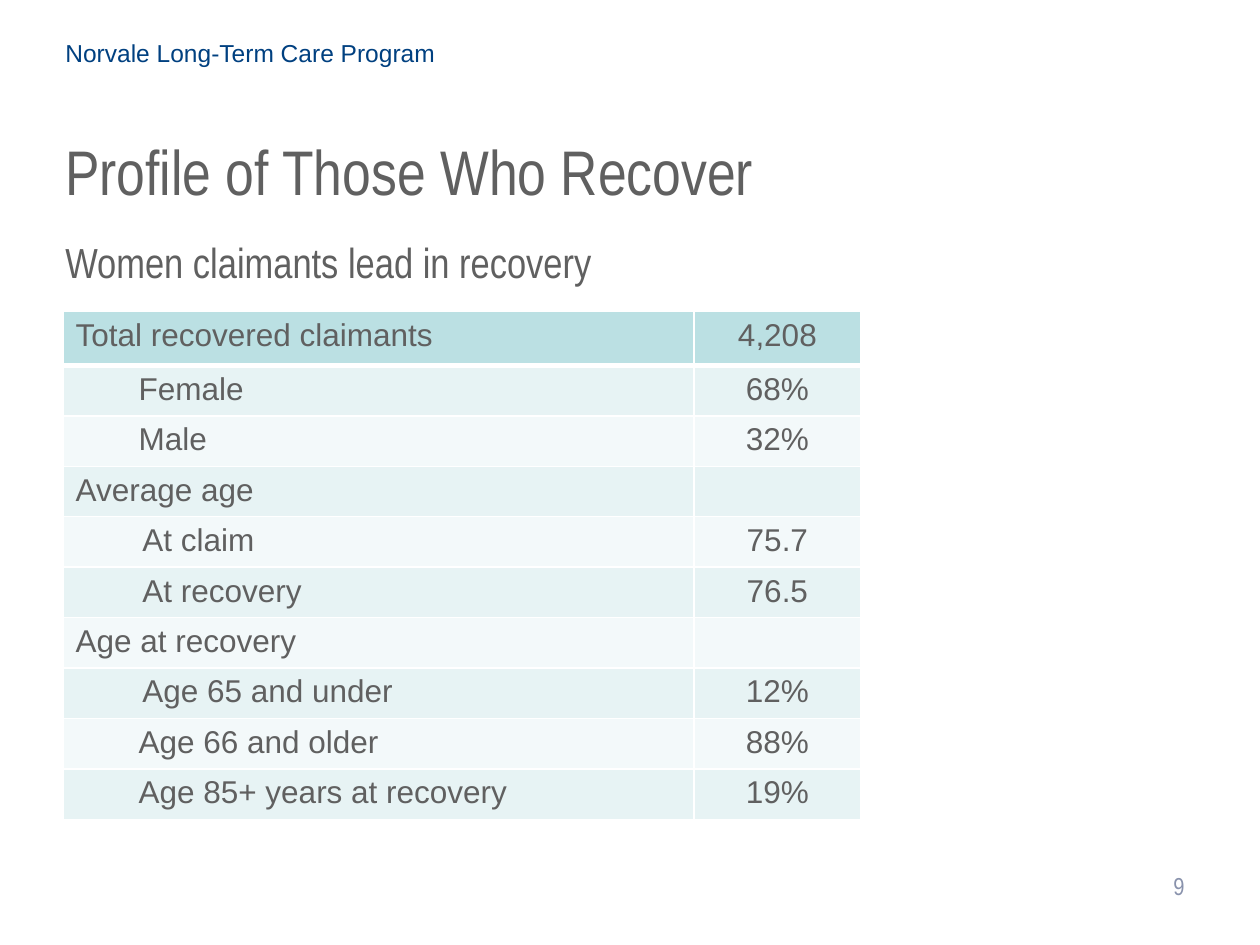
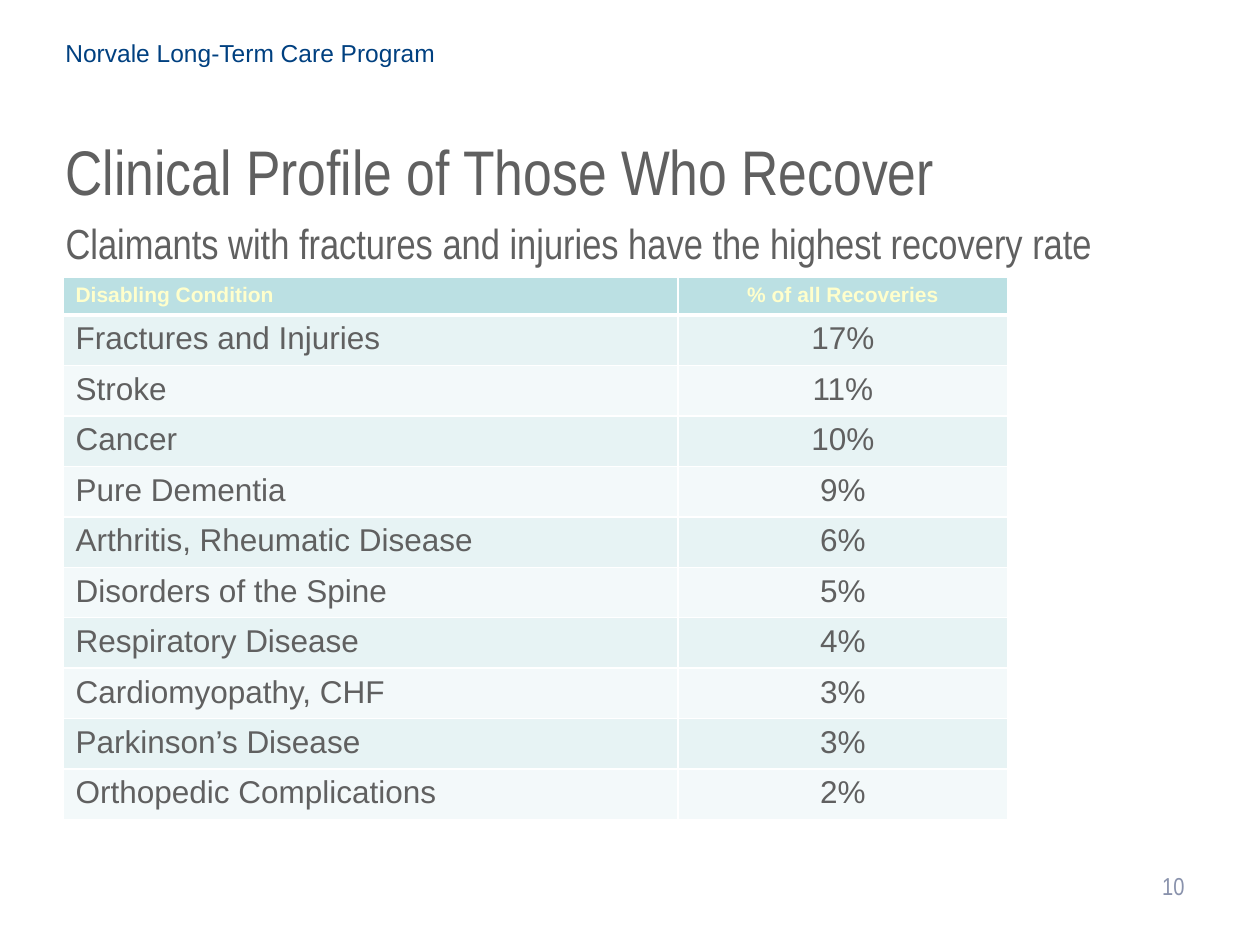
from dataclasses import dataclass

from lxml import etree
from pptx import Presentation
from pptx import util as u
from pptx.dml.color import RGBColor
from pptx.enum import text as t
from pptx.oxml import ns

PX = 9144
GREY = RGBColor(0x60, 0x60, 0x60)
NAVY = RGBColor(0x00, 0x40, 0x80)
SLATE = RGBColor(0x89, 0x92, 0xAC)
CREAM = RGBColor(0xFF, 0xFF, 0xCC)
WHITE = RGBColor(0xFF, 0xFF, 0xFF)
HEADER_FILL = RGBColor(0xBB, 0xE0, 0xE3)
BAND_FILLS = (RGBColor(0xF3, 0xF9, 0xFA), RGBColor(0xE7, 0xF3, 0xF4))
BODY_FONT = "Arial"
TITLE_FONT = "Arial Narrow"
PROGRAM = "Norvale Long-Term Care Program"


@dataclass(frozen=True)
class Area:
    left: int
    top: int
    width: int
    height: int
    margin_x: int = 10
    margin_y: int = 5


@dataclass(frozen=True)
class Row:
    label: str
    value: str = ""
    indent: int = 0
    height: int = 38


@dataclass(frozen=True)
class Page:
    number: int
    title: str
    subtitle: str
    subtitle_area: Area
    table_top: int
    columns: tuple[int, int]
    rows: list[Row]
    header_size: int = 18
    header_color: RGBColor = GREY
    header_bold: bool = False


PROGRAM_AREA = Area(42, 25, 908, 40)
TITLE_AREA = Area(42, 100, 908, 67)
NUMBER_AREA = Area(717, 683, 233, 40)
TABLE_LEFT = 50

CONDITIONS = [
    ("Fractures and Injuries", "17%"),
    ("Stroke", "11%"),
    ("Cancer", "10%"),
    ("Pure Dementia", "9%"),
    ("Arthritis, Rheumatic Disease", "6%"),
    ("Disorders of the Spine", "5%"),
    ("Respiratory Disease", "4%"),
    ("Cardiomyopathy, CHF", "3%"),
    ("Parkinson’s Disease", "3%"),
    ("Orthopedic Complications", "2%"),
]

PAGES = [
    Page(
        number=9,
        title="Profile of Those Who Recover",
        subtitle="Women claimants lead in recovery",
        subtitle_area=Area(42, 183, 925, 58),
        table_top=247,
        columns=(501, 132),
        rows=[
            Row("Total recovered claimants", "4,208", height=43),
            Row("Female", "68%", 50),
            Row("Male", "32%", 50),
            Row("Average age"),
            Row("At claim", "75.7", 53),
            Row("At recovery", "76.5", 53),
            Row("Age at recovery"),
            Row("Age 65 and under", "12%", 53, height=40),
            Row("Age 66 and older", "88%", 50),
            Row("Age 85+ years at recovery", "19%", 50),
        ],
    ),
    Page(
        number=10,
        title="Clinical Profile of Those Who Recover",
        subtitle="Claimants with fractures and injuries have the highest recovery rate",
        subtitle_area=Area(50, 171, 872, 44, 2, 2),
        table_top=220,
        columns=(488, 262),
        rows=[Row("Disabling Condition", "% of all Recoveries", height=30)]
        + [Row(label, value, height=40) for label, value in CONDITIONS],
        header_size=12,
        header_color=CREAM,
        header_bold=True,
    ),
]


def write(frame, text: str, *, size: int, color: RGBColor = GREY,
          font: str = BODY_FONT, bold: bool = False, indent: int = 0,
          align=t.PP_ALIGN.LEFT) -> None:
    para = frame.paragraphs[0]
    para.alignment = align
    if indent:
        para._p.get_or_add_pPr().set("marL", str(indent * PX))
    if not text:
        para.font.size = u.Pt(size)
        return
    span = para.add_run()
    span.text = text
    span.font.size = u.Pt(size)
    span.font.name = font
    span.font.bold = bold
    span.font.color.rgb = color


def add_text(slide, area: Area, text: str, *,
             anchor=t.MSO_ANCHOR.TOP, **text_format) -> None:
    box = slide.shapes.add_textbox(
        area.left * PX, area.top * PX, area.width * PX, area.height * PX)
    frame = box.text_frame
    frame.word_wrap = True
    frame.vertical_anchor = anchor
    frame.margin_left = frame.margin_right = area.margin_x * PX
    frame.margin_top = frame.margin_bottom = area.margin_y * PX
    write(frame, text, **text_format)


def set_borders(cell, row_index: int) -> None:
    properties = cell._tc.get_or_add_tcPr()
    widths = {
        "lnL": 1,
        "lnR": 1,
        "lnT": 3 if row_index == 1 else 1,
        "lnB": 3 if row_index == 0 else 1,
    }
    for position, (side, width) in enumerate(widths.items()):
        line = etree.Element(ns.qn(f"a:{side}"), w=str(u.Pt(width)))
        fill = etree.SubElement(line, ns.qn("a:solidFill"))
        etree.SubElement(fill, ns.qn("a:srgbClr"), val=str(WHITE))
        properties.insert(position, line)


def add_recovery_table(slide, page: Page) -> None:
    table = slide.shapes.add_table(
        len(page.rows), len(page.columns), TABLE_LEFT * PX, page.table_top * PX,
        sum(page.columns) * PX, sum(row.height for row in page.rows) * PX).table
    table.first_row = table.horz_banding = False
    for column, width in zip(table.columns, page.columns):
        column.width = width * PX
    for index, row in enumerate(page.rows):
        table.rows[index].height = row.height * PX
        text_format = {"size": 18}
        if index == 0:
            text_format = {"size": page.header_size, "color": page.header_color,
                           "bold": page.header_bold}
        label_cell, value_cell = table.rows[index].cells
        write(label_cell.text_frame, row.label, indent=row.indent, **text_format)
        write(value_cell.text_frame, row.value, align=t.PP_ALIGN.CENTER, **text_format)
        for cell in (label_cell, value_cell):
            cell.fill.solid()
            cell.fill.fore_color.rgb = BAND_FILLS[index % 2] if index else HEADER_FILL
            set_borders(cell, index)


def add_page(deck, page: Page) -> None:
    slide = deck.slides.add_slide(deck.slide_layouts[6])
    add_text(slide, TITLE_AREA, page.title, size=36, font=TITLE_FONT)
    add_text(slide, NUMBER_AREA, str(page.number), size=14, font=TITLE_FONT,
             color=SLATE, align=t.PP_ALIGN.RIGHT, anchor=t.MSO_ANCHOR.MIDDLE)
    add_text(slide, PROGRAM_AREA, PROGRAM, size=14, color=NAVY)
    add_text(slide, page.subtitle_area, page.subtitle, size=24, font=TITLE_FONT)
    add_recovery_table(slide, page)


def main() -> None:
    deck = Presentation()
    deck.slide_width = 1000 * PX
    deck.slide_height = 750 * PX
    for page in PAGES:
        add_page(deck, page)
    deck.save("out.pptx")


if __name__ == "__main__":
    main()
